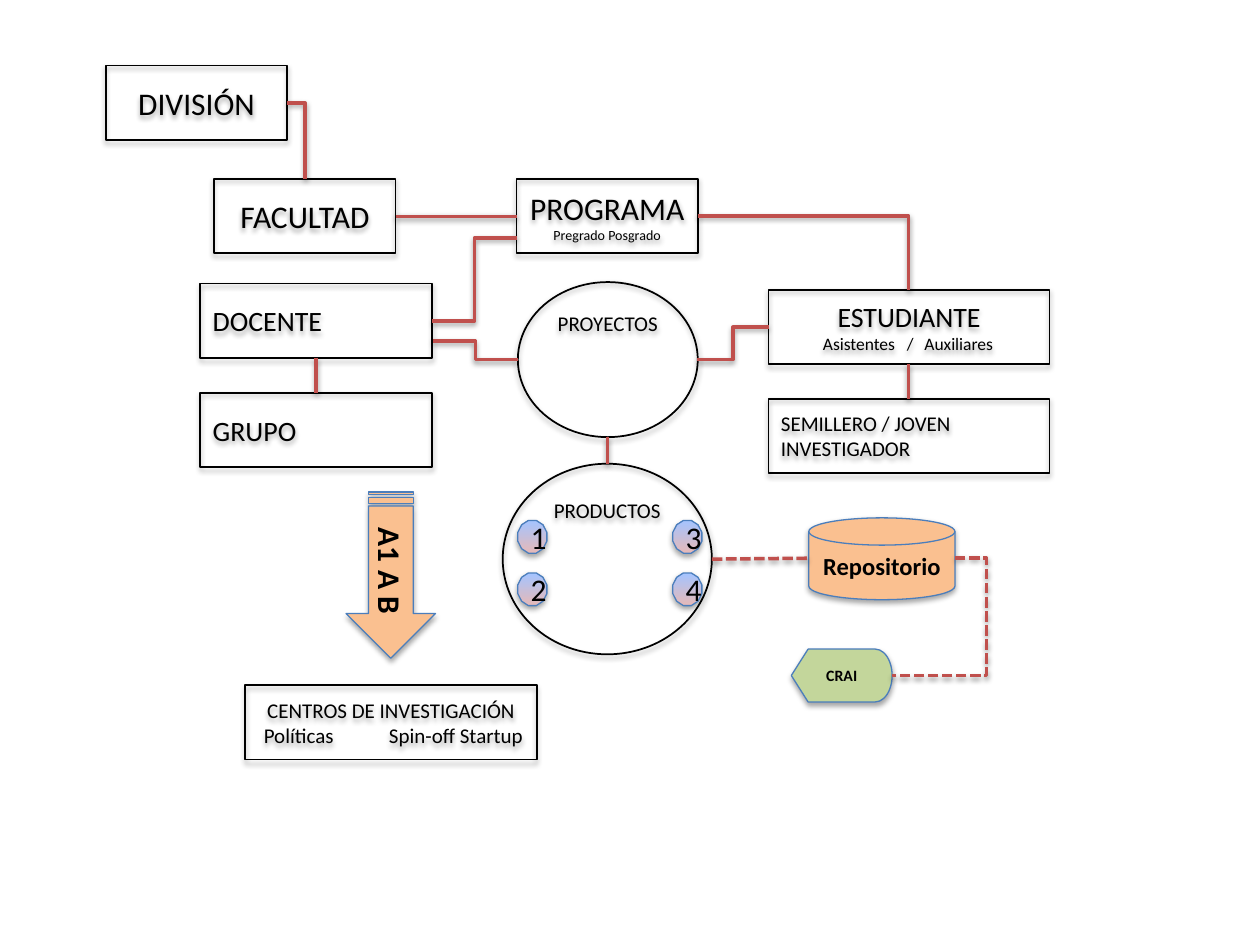
from dataclasses import dataclass
from typing import Optional

from lxml import etree
from pptx import Presentation
from pptx.dml.color import RGBColor
from pptx.enum.dml import MSO_LINE
from pptx.enum.shapes import MSO_CONNECTOR, MSO_SHAPE
from pptx.enum.text import MSO_ANCHOR, PP_ALIGN
from pptx.oxml.ns import qn
from pptx.util import Pt

RECTANGLE = MSO_SHAPE.RECTANGLE
ELLIPSE = MSO_SHAPE.OVAL
DISK = MSO_SHAPE.FLOWCHART_MAGNETIC_DISK
DISPLAY = MSO_SHAPE.FLOWCHART_DISPLAY
ARROW = MSO_SHAPE.STRIPED_RIGHT_ARROW
DODECAGON = MSO_SHAPE.DODECAGON
STRAIGHT = MSO_CONNECTOR.STRAIGHT
ELBOW = MSO_CONNECTOR.ELBOW
LEFT = PP_ALIGN.LEFT
CENTER = PP_ALIGN.CENTER
TOP = MSO_ANCHOR.TOP
MIDDLE = MSO_ANCHOR.MIDDLE
DASH = MSO_LINE.SQUARE_DOT

BLACK = RGBColor(0x00, 0x00, 0x00)
BLUE = RGBColor(0x4B, 0x7E, 0xBC)
RED = RGBColor(0xC0, 0x50, 0x4D)
ORANGE = RGBColor(0xFA, 0xC0, 0x90)
GREEN = RGBColor(0xC3, 0xD6, 0x9B)
PINK = RGBColor(0xE6, 0xB9, 0xB8)
LIGHT_BLUE = RGBColor(0xA4, 0xC4, 0xFF)

FONT = "Calibri"
BOX_HEIGHT = 42.5


@dataclass
class Line:
    text: str
    size: float
    alignment: PP_ALIGN = CENTER
    tabs: tuple[float, ...] = ()


@dataclass
class Node:
    kind: MSO_SHAPE
    left: float
    top: float
    width: float
    height: float
    lines: list[Line]
    fill: Optional[RGBColor] = None
    gradient: bool = False
    anchor: MSO_ANCHOR = MIDDLE
    rotation: float = 0

    @property
    def accented(self) -> bool:
        return self.gradient or self.fill is not None


@dataclass
class Link:
    start: tuple[float, float]
    end: tuple[float, float]
    kind: MSO_CONNECTOR = STRAIGHT
    single_bend: bool = False
    dashed: bool = False
    adjustment: Optional[int] = None


def box(left: float, top: float, width: float, *lines: Line) -> Node:
    return Node(RECTANGLE, left, top, width, BOX_HEIGHT, list(lines))


NODES = [
    box(60.5, 37.4, 103.7, Line("DIVISIÓN", 18)),
    box(122.4, 102.2, 103.7, Line("FACULTAD", 18)),
    box(295.2, 102.2, 103.7, Line("PROGRAMA", 18), Line("Pregrado Posgrado", 8)),
    box(114.5, 162, 132.5, Line("DOCENTE", 16, LEFT)),
    box(439.2, 165.6, 160.6, Line("ESTUDIANTE", 16),
        Line("\tAsistentes\t/\tAuxiliares", 10, LEFT, (24, 72, 82))),
    box(114.5, 224.6, 132.5, Line("GRUPO", 16, LEFT)),
    box(439.2, 227.8, 160.6, Line("SEMILLERO / JOVEN INVESTIGADOR", 12, LEFT)),
    Node(ELLIPSE, 287.3, 265, 119.5, 108.9, [Line("PRODUCTOS", 12)], anchor=TOP),
    Node(ELLIPSE, 295.9, 161.2, 102.8, 88.6, [Line("PROYECTOS", 12)], anchor=TOP),
    box(140.2, 391.6, 166.5, Line("CENTROS DE INVESTIGACIÓN", 12),
        Line("\tPolíticas\tSpin-off Startup", 12, LEFT, (3.5, 75))),
    Node(DISK, 462.2, 295.9, 83.5, 46.8, [Line("Repositorio", 14)], ORANGE),
    Node(ARROW, 175.8, 303.1, 95, 51.1, [Line("A1 A B", 18)], ORANGE, rotation=90),
    Node(DISPLAY, 452.2, 370.9, 57.6, 30.2, [Line("CRAI", 9)], GREEN),
]

# Numbered markers, filled column by column
MARKERS = [
    Node(DODECAGON, 295.9 + 88.6 * (index // 2), 297.4 + 30 * (index % 2),
         16.6, 18.7, [Line(str(index + 1), 18)], gradient=True)
    for index in range(4)
]

LINKS = [
    Link((164.2, 58.8), (174.4, 102.2), ELBOW, single_bend=True),
    Link((226.1, 123.6), (295.2, 123.6)),
    Link((295.2, 136), (247, 183.5), ELBOW),
    Link((398.6, 123.6), (519.3, 165.6), ELBOW, single_bend=True),
    Link((247.5, 195), (295.9, 205.4), ELBOW),
    Link((439.2, 187), (398.5, 205.4), ELBOW),
    Link((180.7, 204.5), (180.7, 224.6)),
    Link((519.3, 208.1), (519.3, 227.8)),
    Link((347.2, 249.8), (347.2, 265)),
    Link((406.8, 319.5), (462.2, 319), dashed=True),
    Link((545.7, 319), (509.8, 386), ELBOW, dashed=True, adjustment=-50500),
]


def add_shadow(properties, opacity: int, distance: float) -> None:
    effects = etree.SubElement(properties, qn("a:effectLst"))
    shadow = etree.SubElement(
        effects, qn("a:outerShdw"), blurRad=str(Pt(3.1)), dist=str(Pt(distance)),
        dir="5400000", rotWithShape="0")
    color = etree.SubElement(shadow, qn("a:srgbClr"), val=str(BLACK))
    etree.SubElement(color, qn("a:alpha"), val=str(opacity * 1000))


def add_tabs(paragraph, positions: tuple[float, ...]) -> None:
    tab_list = etree.SubElement(paragraph._p.get_or_add_pPr(), qn("a:tabLst"))
    for position in positions:
        etree.SubElement(tab_list, qn("a:tab"), pos=str(Pt(position)), algn="l")


def write_lines(text_frame, node: Node) -> None:
    text_frame.word_wrap = True
    text_frame.vertical_anchor = node.anchor
    text_frame.text = "\n".join(line.text for line in node.lines)
    for paragraph, line in zip(text_frame.paragraphs, node.lines):
        paragraph.alignment = line.alignment
        if line.tabs:
            add_tabs(paragraph, line.tabs)
        for run in paragraph.runs:
            run.font.name = FONT
            run.font.size = Pt(line.size)
            run.font.bold = node.fill is not None
            run.font.color.rgb = BLACK


def draw_node(slide, node: Node) -> None:
    shape = slide.shapes.add_shape(
        node.kind, Pt(node.left), Pt(node.top), Pt(node.width), Pt(node.height))
    shape.rotation = node.rotation
    if node.gradient:
        shape.fill.gradient()
        shape.fill.gradient_angle = 90
        for stop, color in zip(shape.fill.gradient_stops, (PINK, LIGHT_BLUE)):
            stop.color.rgb = color
    elif node.fill is not None:
        shape.fill.solid()
        shape.fill.fore_color.rgb = node.fill
    else:
        shape.fill.background()
    shape.line.color.rgb = BLUE if node.accented else BLACK
    shape.line.width = Pt(0.75 if node.accented else 1)
    add_shadow(shape._element.spPr, 35, 1.8)
    write_lines(shape.text_frame, node)


def draw_link(slide, link: Link) -> None:
    connector = slide.shapes.add_connector(
        link.kind, *(Pt(value) for value in link.start + link.end))
    connector.line.color.rgb = RED
    connector.line.width = Pt(2)
    if link.dashed:
        connector.line.dash_style = DASH
    properties = connector._element.spPr
    geometry = properties.find(qn("a:prstGeom"))
    if link.single_bend:
        geometry.set("prst", "bentConnector2")
    if link.adjustment is not None:
        guides = geometry.find(qn("a:avLst"))
        etree.SubElement(guides, qn("a:gd"), name="adj1", fmla=f"val {link.adjustment}")
    add_shadow(properties, 38, 1.6)


def main() -> None:
    presentation = Presentation()
    presentation.slide_width, presentation.slide_height = Pt(720), Pt(540)
    slide = presentation.slides.add_slide(presentation.slide_layouts[6])
    for node in NODES + MARKERS:
        draw_node(slide, node)
    for link in LINKS:
        draw_link(slide, link)
    presentation.save("out.pptx")


if __name__ == "__main__":
    main()
